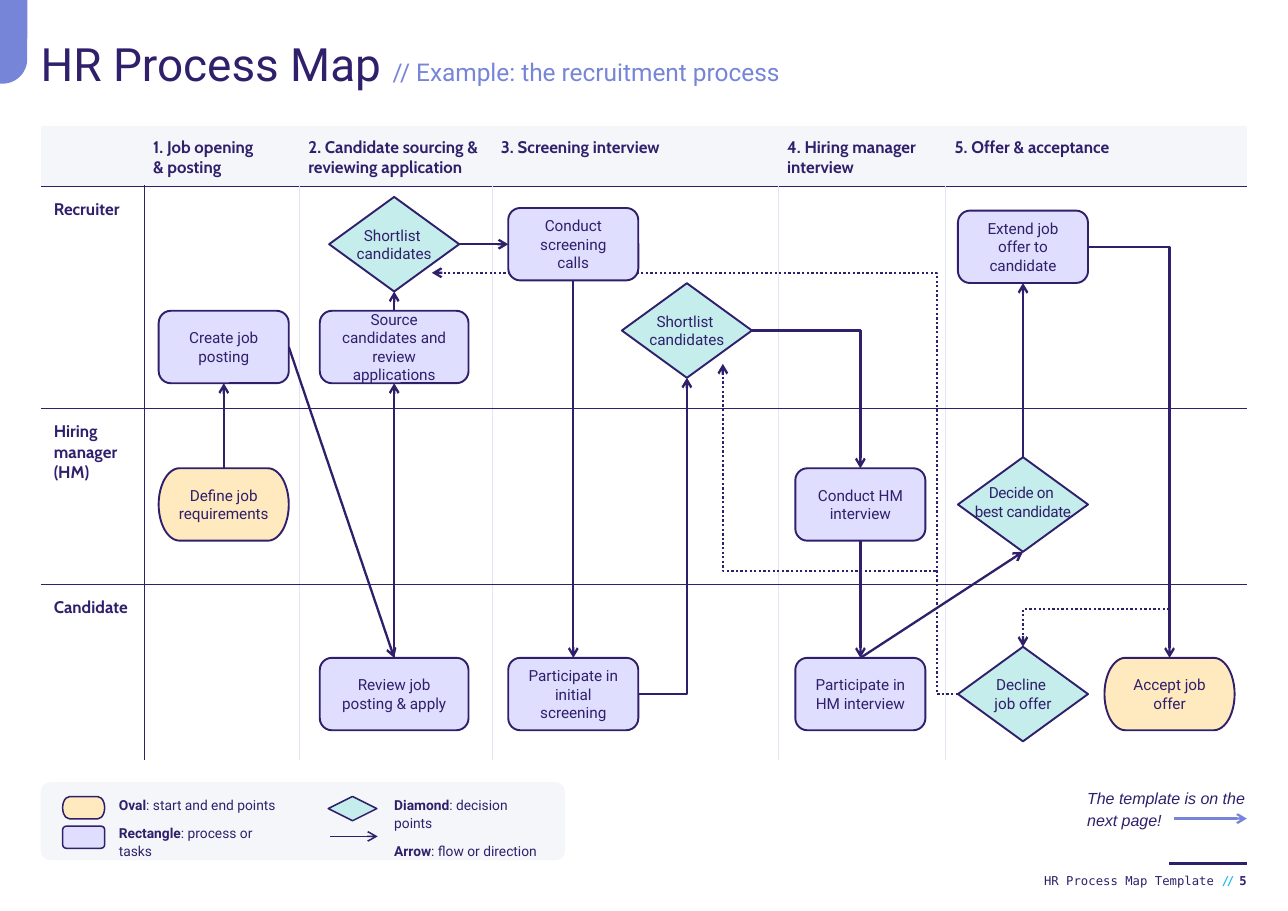
import math

import lxml.etree
import pptx
import pptx.dml.color
import pptx.enum.dml
import pptx.enum.shapes
import pptx.enum.text
import pptx.oxml.ns
import pptx.util

Cm = pptx.util.Cm
Pt = pptx.util.Pt
RGBColor = pptx.dml.color.RGBColor
MSO_SHAPE = pptx.enum.shapes.MSO_SHAPE
MSO_CONNECTOR = pptx.enum.shapes.MSO_CONNECTOR
ANCHOR = pptx.enum.text.MSO_ANCHOR
ALIGN = pptx.enum.text.PP_ALIGN
qn = pptx.oxml.ns.qn

NAVY = RGBColor(0x30, 0x20, 0x6B)
PERIWINKLE = RGBColor(0x77, 0x85, 0xD8)
CYAN = RGBColor(0x1E, 0xBB, 0xF0)
PALE = RGBColor(0xF4, 0xF6, 0xFA)
GRID = RGBColor(0xE2, 0xE5, 0xF3)
LILAC = RGBColor(0xDF, 0xDE, 0xFF)
SAND = RGBColor(0xFF, 0xE9, 0xBF)
MINT = RGBColor(0xC5, 0xED, 0xEC)

SYMBOLS = {
    "process": (MSO_SHAPE.FLOWCHART_ALTERNATE_PROCESS, LILAC),
    "decision": (MSO_SHAPE.FLOWCHART_DECISION, MINT),
    "terminal": (MSO_SHAPE.FLOWCHART_TERMINATOR, SAND),
}

prs = pptx.Presentation()
prs.slide_width, prs.slide_height = Cm(29.7), Cm(21)
slide = prs.slides.add_slide(prs.slide_layouts[6])
shapes = slide.shapes


def add_symbol(kind, x, y, width, height, text="", weight=1.25):
    """Draw a flowchart symbol centred on (x, y)."""
    preset, fill = SYMBOLS[kind]
    symbol = shapes.add_shape(preset, Cm(x - width / 2), Cm(y - height / 2), Cm(width), Cm(height))
    symbol.shadow.inherit = False
    symbol.fill.solid()
    symbol.fill.fore_color.rgb = fill
    symbol.line.color.rgb = NAVY
    symbol.line.width = Pt(weight)
    frame = symbol.text_frame
    frame.vertical_anchor = ANCHOR.MIDDLE
    frame.word_wrap = kind != "decision"
    if kind == "decision":
        frame.margin_left = frame.margin_right = Cm(0.1)
    if text:
        label = frame.paragraphs[0]
        label.text = text
        label.alignment = ALIGN.CENTER
        label.font.name, label.font.size, label.font.color.rgb = "Roboto", Pt(10), NAVY
    return symbol


def add_line(x1, y1, x2, y2, route="line", bend=None, dotted=False, color=NAVY, weight=1.5, head=True):
    """Draw a straight or bent connector; bend is the share of the width before the turn."""
    kind = MSO_CONNECTOR.STRAIGHT if route == "line" else MSO_CONNECTOR.ELBOW
    line = shapes.add_connector(kind, Cm(x1), Cm(y1), Cm(x2), Cm(y2))
    line.line.color.rgb = color
    line.line.width = Pt(weight)
    if dotted:
        line.line.dash_style = pptx.enum.dml.MSO_LINE.ROUND_DOT
    properties = line._element.spPr
    geometry = properties.find(qn("a:prstGeom"))
    geometry.set("prst", route)
    if bend is not None:
        lxml.etree.SubElement(geometry.find(qn("a:avLst")), qn("a:gd"),
                              name="adj1", fmla=f"val {round(bend * 100000)}")
    if head:
        lxml.etree.SubElement(properties.find(qn("a:ln")), qn("a:tailEnd"), type="arrow")
    lxml.etree.SubElement(properties, qn("a:effectLst"))


# Corner accent
RADIUS = 0.57
arc = [(0.06 + RADIUS * math.cos(math.radians(a)), 1.36 + RADIUS * math.sin(math.radians(a)))
       for a in range(0, 91, 6)]
outline = shapes.build_freeform(0, 0, scale=1.0)
outline.add_line_segments([(Cm(x), Cm(y)) for x, y in [(0.63, 0), *arc, (0, 1.93)]], close=True)
accent = outline.convert_to_shape()
accent.shadow.inherit = False
accent.fill.solid()
accent.fill.fore_color.rgb = PERIWINKLE
accent.line.fill.background()

# Swimlane table
STAGES = ["", "1. Job opening \v& posting", "2. Candidate sourcing & reviewing application",
          "3. Screening interview", "4. Hiring manager interview", "5. Offer & acceptance"]
LANES = ["", "Recruiter", "Hiring manager (HM)", "Candidate"]
COLUMN_WIDTHS = [2.39, 3.58, 4.44, 6.6, 3.86, 6.94]
ROW_HEIGHTS = [1.37, 5.11, 4.06, 4.06]

lanes = shapes.add_table(4, 6, Cm(0.94), Cm(2.9), Cm(sum(COLUMN_WIDTHS)), Cm(sum(ROW_HEIGHTS))).table
lanes.first_row = lanes.horz_banding = False
NO_STYLE = "{2D5ABB26-0587-4C30-8999-92F81FD0307C}"
lanes._tbl.tblPr.find(qn("a:tableStyleId")).text = NO_STYLE
for column, width in zip(lanes.columns, COLUMN_WIDTHS):
    column.width = Cm(width)
for r, height in enumerate(ROW_HEIGHTS):
    lanes.rows[r].height = Cm(height)
    for c in range(len(COLUMN_WIDTHS)):
        cell = lanes.cell(r, c)
        borders = {}
        if r > 0:
            if c > 0:
                borders["lnL"] = (NAVY if c == 1 else GRID, 0.75)
            if c < 5:
                borders["lnR"] = (NAVY if c == 0 else GRID, 0.75)
            borders["lnT"] = (NAVY, 1.5 if r == 1 else 0.75)
        if r < 3:
            borders["lnB"] = (NAVY, 1.5 if r == 0 else 0.75)
        cell_properties = cell._tc.get_or_add_tcPr()
        for side, (color, weight) in borders.items():
            border = lxml.etree.SubElement(cell_properties, qn(f"a:{side}"), w=str(Pt(weight)))
            solid = lxml.etree.SubElement(border, qn("a:solidFill"))
            lxml.etree.SubElement(solid, qn("a:srgbClr"), val=str(color))
        if r == 0:
            cell.fill.solid()
            cell.fill.fore_color.rgb = PALE
            cell.margin_left = cell.margin_right = cell.margin_bottom = Cm(0.2)
            cell.margin_top = Cm(0.25)
        else:
            cell.fill.background()
            cell.margin_left = cell.margin_right = cell.margin_top = cell.margin_bottom = Cm(0.3)
        heading = STAGES[c] if r == 0 else LANES[r] if c == 0 else ""
        if heading:
            paragraph = cell.text_frame.paragraphs[0]
            paragraph.text = heading
            paragraph.font.name, paragraph.font.size = "Cabin", Pt(11)
            paragraph.font.bold, paragraph.font.color.rgb = True, NAVY

# Flow: symbol centres, then the arrows that run beneath the symbols
BOX_W, WIDE_W, BOX_H, DIAMOND_H = 3, 3.43, 1.67, 2.18
half_w, half_h, half_d = BOX_W / 2, BOX_H / 2, DIAMOND_H / 2
POSTING_X, SOURCING_X, SCREEN_X, SHORTLIST_X, HM_X, OFFER_X, ACCEPT_X = (
    5.16, 9.09, 13.22, 15.84, 19.84, 23.59, 26.97)
CALLS_Y, OFFER_Y, SHORTLIST_Y, POSTING_Y, HM_Y, CANDIDATE_Y = 5.63, 5.69, 7.62, 8, 11.63, 16

add_line(POSTING_X, HM_Y - half_h, POSTING_X, POSTING_Y + half_h)
add_line(POSTING_X + half_w, POSTING_Y, SOURCING_X, CANDIDATE_Y - half_h)
add_line(SOURCING_X, CANDIDATE_Y - half_h, SOURCING_X, POSTING_Y + half_h)
add_line(SOURCING_X, POSTING_Y - half_h, SOURCING_X, CALLS_Y + half_d)
add_line(SOURCING_X + half_w, CALLS_Y, SCREEN_X - half_w, CALLS_Y)
add_line(SCREEN_X, CALLS_Y + half_h, SCREEN_X, CANDIDATE_Y - half_h)
add_line(SCREEN_X + half_w, CANDIDATE_Y, SHORTLIST_X, SHORTLIST_Y + half_d, "bentConnector2")
add_line(SHORTLIST_X + half_w, SHORTLIST_Y, HM_X, HM_Y - half_h, "bentConnector2")
add_line(HM_X, HM_Y + half_h, HM_X, CANDIDATE_Y - half_h)
add_line(HM_X, CANDIDATE_Y - half_h, OFFER_X, HM_Y + half_d)
add_line(OFFER_X, HM_Y - half_d, OFFER_X, OFFER_Y + half_h)
add_line(OFFER_X + half_w, OFFER_Y, ACCEPT_X, CANDIDATE_Y - half_h, "bentConnector2")
add_line(ACCEPT_X, 14.04, OFFER_X, CANDIDATE_Y - half_d, "bentConnector2", dotted=True)
add_line(21.58, 13.16, 16.67, 8.39, "bentConnector2", dotted=True)
add_line(OFFER_X - half_w, CANDIDATE_Y, 9.96, 6.29, "bentConnector3", bend=0.04, dotted=True)

for kind, x, y, text in [
    ("terminal", POSTING_X, HM_Y, "Define job requirements"),
    ("process", POSTING_X, POSTING_Y, "Create job posting"),
    ("process", SOURCING_X, POSTING_Y, "Source candidates and review applications"),
    ("process", SOURCING_X, CANDIDATE_Y, "Review job posting & apply"),
    ("decision", SOURCING_X, CALLS_Y, "Shortlist \vcandidates"),
    ("process", SCREEN_X, CALLS_Y, "Conduct screening calls"),
    ("process", SCREEN_X, CANDIDATE_Y, "Participate in initial screening"),
    ("decision", SHORTLIST_X, SHORTLIST_Y, "Shortlist \vcandidates"),
    ("process", HM_X, HM_Y, "Conduct HM interview"),
    ("process", HM_X, CANDIDATE_Y, "Participate in HM interview"),
    ("process", OFFER_X, OFFER_Y, "Extend job offer to candidate"),
    ("decision", OFFER_X, HM_Y, "Decide on \vbest candidate"),
    ("decision", OFFER_X, CANDIDATE_Y, "Decline \vjob offer"),
    ("terminal", ACCEPT_X, CANDIDATE_Y, "Accept job offer"),
]:
    width = WIDE_W if kind == "process" and x == SOURCING_X else BOX_W
    symbol = add_symbol(kind, x, y, width, DIAMOND_H if kind == "decision" else BOX_H, text)
    if text.startswith("Decide"):
        symbol.text_frame.margin_top = 0
        for run in symbol.text_frame.paragraphs[0].runs:
            run._r.get_or_add_rPr().set("spc", "-20")

# Legend
legend = shapes.add_shape(MSO_SHAPE.ROUNDED_RECTANGLE, Cm(0.94), Cm(18.03), Cm(12.09), Cm(1.8))
legend.adjustments[0] = 0.12
legend.shadow.inherit = False
legend.fill.solid()
legend.fill.fore_color.rgb = PALE
legend.line.fill.background()
add_symbol("terminal", 1.93, 18.62, 0.97, 0.51, weight=1)
add_symbol("process", 1.93, 19.3, 0.97, 0.51, weight=1)
add_symbol("decision", 8.13, 18.64, 1.12, 0.56, weight=1)
add_line(7.62, 19.28, 8.71, 19.28, weight=1)

# Free text: box, anchor, alignment, line spacing, space after, font, size, paragraphs of runs
# Each run is text, colour, bold, size, letter spacing
for box, anchor, align, spacing, after, font, size, paragraphs in [
    ((0.94, 0.89, 27.81, 1.3), ANCHOR.MIDDLE, ALIGN.LEFT, 0.9, 0, "Roboto", 30,
     [[("HR Process Map ", NAVY, False, 30, 0),
       ("// Example: the recruitment process", PERIWINKLE, False, 16, 0)]]),
    ((2.74, 18.39, 3.71, 1.35), ANCHOR.MIDDLE, ALIGN.LEFT, 1.12, 6, "Roboto", 9,
     [[("Oval", NAVY, True, 9, 0), (": start and end points", NAVY, False, 9, 0)],
      [("Rectangle", NAVY, True, 9, 0), (": process or tasks", NAVY, False, 9, 0)]]),
    ((9.09, 18.39, 3.48, 1.35), ANCHOR.MIDDLE, ALIGN.LEFT, 1.12, 6, "Roboto", 9,
     [[("Diamond", NAVY, True, 9, 0), (": decision points", NAVY, False, 9, 0)],
      [("Arrow", NAVY, True, 9, 0), (": flow or direction", NAVY, False, 9, 0)]]),
    ((25.07, 17.93, 3.76, 1.37), ANCHOR.MIDDLE, ALIGN.LEFT, 1.13, 0, "Arial", 10.5,
     [[("The template is on the next page!", NAVY, False, 10.5, 0)]]),
    ((0.94, 20.09, 27.81, 0.48), ANCHOR.TOP, ALIGN.RIGHT, 1.14, 0, "DejaVu Sans Mono", 8,
     [[("HR Process Map Template ", NAVY, False, 8, 0), ("// ", CYAN, True, 8, -150),
       ("5", NAVY, True, 8, 0)]]),
]:
    frame = shapes.add_textbox(*map(Cm, box)).text_frame
    frame.word_wrap = True
    frame.vertical_anchor = anchor
    frame.margin_left = frame.margin_right = frame.margin_top = frame.margin_bottom = 0
    for i, runs in enumerate(paragraphs):
        paragraph = frame.add_paragraph() if i else frame.paragraphs[0]
        paragraph.alignment, paragraph.line_spacing, paragraph.space_after = align, spacing, Pt(after)
        paragraph.font.name, paragraph.font.size = font, Pt(size)
        paragraph.font.italic = font == "Arial"
        for text, color, bold, run_size, tracking in runs:
            run = paragraph.add_run()
            run.text = text
            run.font.size, run.font.bold, run.font.color.rgb = Pt(run_size), bold, color
            if tracking:
                run._r.get_or_add_rPr().set("spc", str(tracking))

add_line(27.08, 18.87, 28.75, 18.87, color=PERIWINKLE)
add_line(28.75, 19.91, 26.95, 19.91, weight=2, head=False)
prs.save("out.pptx")
